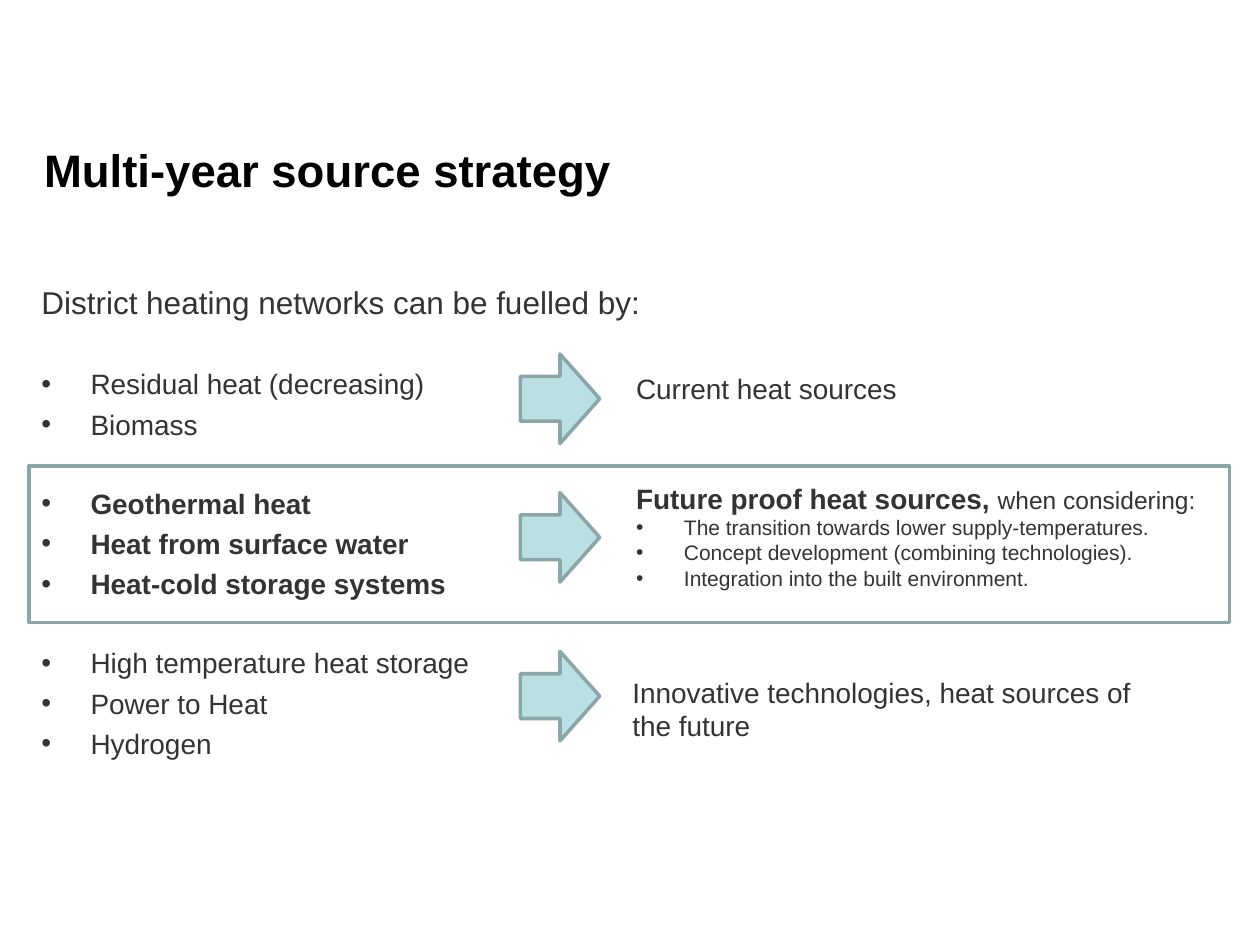
from dataclasses import dataclass

from lxml.etree import SubElement
from pptx import Presentation
from pptx.dml.color import RGBColor
from pptx.enum.shapes import MSO_SHAPE as Shape
from pptx.enum.text import MSO_ANCHOR as Anchor
from pptx.oxml.ns import qn
from pptx.util import Inches, Pt


@dataclass(frozen=True)
class Theme:
    font: str = "Arial"
    title_color: RGBColor = RGBColor(0x00, 0x00, 0x00)
    text_color: RGBColor = RGBColor(0x33, 0x33, 0x33)
    arrow_fill: RGBColor = RGBColor(0xBB, 0xE0, 0xE3)
    outline: RGBColor = RGBColor(0x8A, 0xA6, 0xA8)
    line_width: float = 2
    title: float = 26
    lead: float = 18
    body: float = 16
    aside: float = 14
    detail: float = 12
    item_gap: float = 3.84
    group_gap: float = 26.06


@dataclass(frozen=True)
class Area:
    """Place on a grid of 100 columns by 75 rows."""
    col: float
    row: float
    cols: float
    rows: float

    def box(self) -> tuple[int, int, int, int]:
        return (self.col * COL, self.row * ROW, self.cols * COL, self.rows * ROW)


@dataclass(frozen=True)
class Run:
    text: str
    size: float
    bold: bool = False
    color: RGBColor = Theme.text_color


@dataclass(frozen=True)
class Para:
    runs: tuple[Run, ...]
    indent: float = 0  # hanging bullet indent in inches
    before: float = 0
    spacing: float | None = None


THEME = Theme()
WIDTH, HEIGHT = Inches(10), Inches(7.5)
COL, ROW = WIDTH / 100, HEIGHT / 75


def add_bullet(p, indent: float) -> None:
    pPr = p._p.get_or_add_pPr()
    pPr.set("marL", str(Inches(indent)))
    pPr.set("indent", str(-Inches(indent)))
    SubElement(pPr, qn("a:buFont"), typeface=THEME.font)
    SubElement(pPr, qn("a:buChar"), char="•")


def add_text(s, area: Area, paras: list[Para], inset: bool = True,
             anchor: Anchor = Anchor.TOP) -> None:
    tf = s.shapes.add_textbox(*map(round, area.box())).text_frame
    tf.word_wrap = True
    tf.vertical_anchor = anchor
    if not inset:
        tf.margin_left = tf.margin_right = tf.margin_top = tf.margin_bottom = 0
    for i, para in enumerate(paras):
        p = tf.paragraphs[0] if i == 0 else tf.add_paragraph()
        p.space_before = Pt(para.before)
        if para.spacing:
            p.line_spacing = para.spacing
        if para.indent:
            add_bullet(p, para.indent)
        for run in para.runs:
            r = p.add_run()
            r.text = run.text
            r.font.name = THEME.font
            r.font.size = Pt(run.size)
            r.font.bold = run.bold
            r.font.color.rgb = run.color


def add_outlined(s, kind: Shape, area: Area, fill: RGBColor | None = None) -> None:
    sp = s.shapes.add_shape(kind, *map(round, area.box()))
    sp.shadow.inherit = False
    if fill is None:
        sp.fill.background()
    else:
        sp.fill.solid()
        sp.fill.fore_color.rgb = fill
    sp.line.color.rgb = THEME.outline
    sp.line.width = Pt(THEME.line_width)


def source_paras() -> list[Para]:
    groups = [
        (False, ["Residual heat (decreasing)", "Biomass"]),
        (True, ["Geothermal heat", "Heat from surface water",
                "Heat-cold storage systems"]),
        (False, ["High temperature heat storage", "Power to Heat", "Hydrogen"]),
    ]
    paras = [Para((Run("District heating networks can be fuelled by:", THEME.lead),))]
    for bold, items in groups:
        for i, item in enumerate(items):
            gap = THEME.item_gap if i else THEME.group_gap
            paras.append(Para((Run(item, THEME.body, bold),), 0.39, gap))
    return paras


def main() -> None:
    prs = Presentation()
    prs.slide_width, prs.slide_height = WIDTH, HEIGHT
    s = prs.slides.add_slide(prs.slide_layouts[6])

    # Title
    title = Run("Multi-year source strategy", THEME.title, True, THEME.title_color)
    add_text(s, Area(3.5, 7.7, 78.7, 7.9), [Para((title,), spacing=1.5)],
             inset=False, anchor=Anchor.BOTTOM)

    # Heat sources on the left
    add_text(s, Area(2.3, 22, 96.8, 45.9), source_paras())

    # What each group stands for
    considerations = ["The transition towards lower supply-temperatures.",
                      "Concept development (combining technologies).",
                      "Integration into the built environment."]
    future = [Para((Run("Future proof heat sources, ", THEME.body, True),
                    Run("when considering:", THEME.aside)))]
    future += [Para((Run(c, THEME.detail),), 0.38) for c in considerations]
    current = [Para((Run("Current heat sources", THEME.body),))]
    innovative = [Para((Run("Innovative technologies, heat sources of the future",
                            THEME.body),))]
    add_text(s, Area(49.5, 29, 50, 3.7), current)
    add_text(s, Area(49.5, 37.7, 47.8, 9.8), future)
    add_text(s, Area(49.2, 53.1, 44.1, 6.4), innovative)

    # Arrows between the columns
    for row in (28.1, 39.1, 51.7):
        add_outlined(s, Shape.RIGHT_ARROW, Area(41.3, row, 6.3, 7.1), THEME.arrow_fill)

    # Frame around the future proof sources
    add_outlined(s, Shape.RECTANGLE, Area(2.3, 37, 95.3, 12.4))

    prs.save("out.pptx")


if __name__ == "__main__":
    main()
